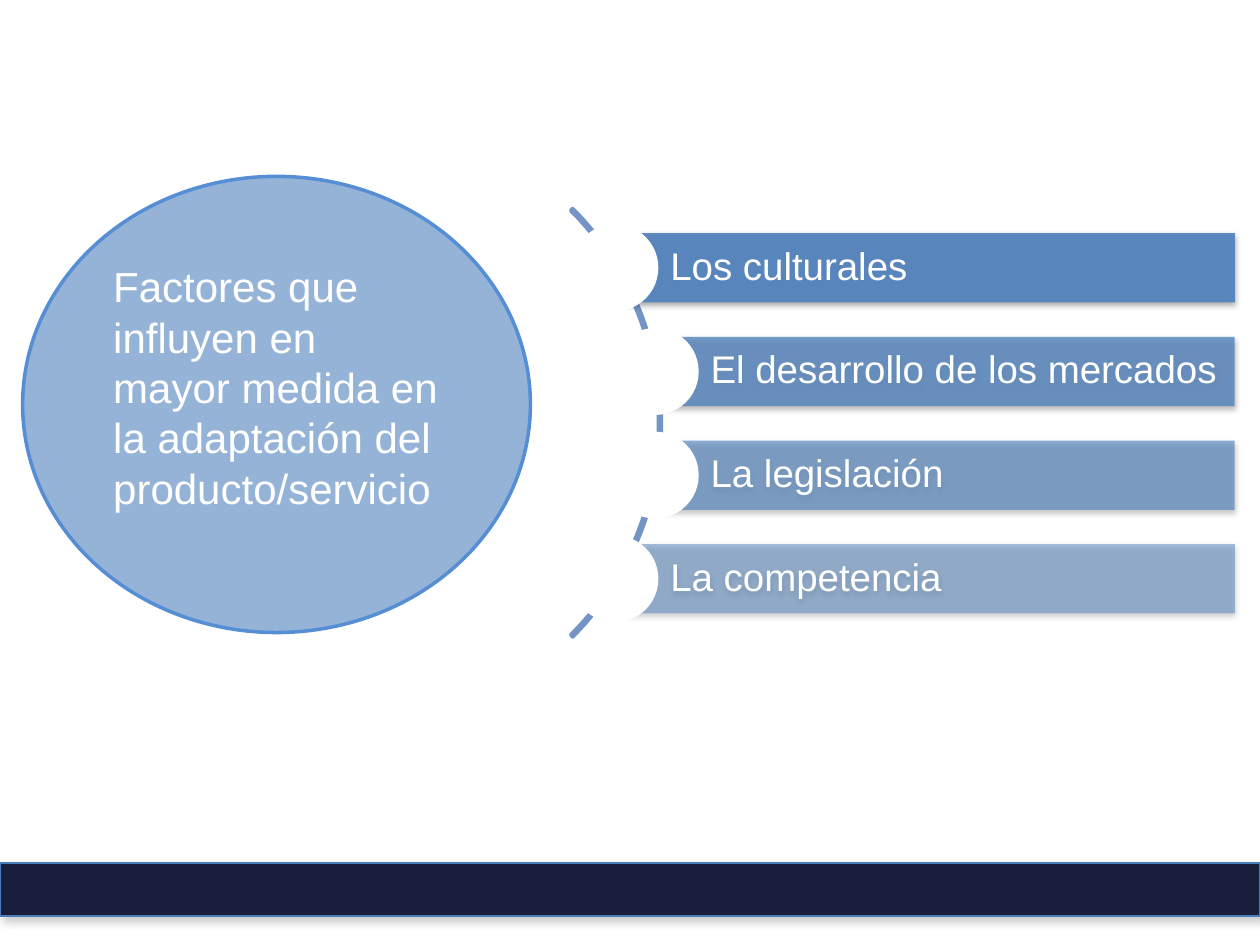
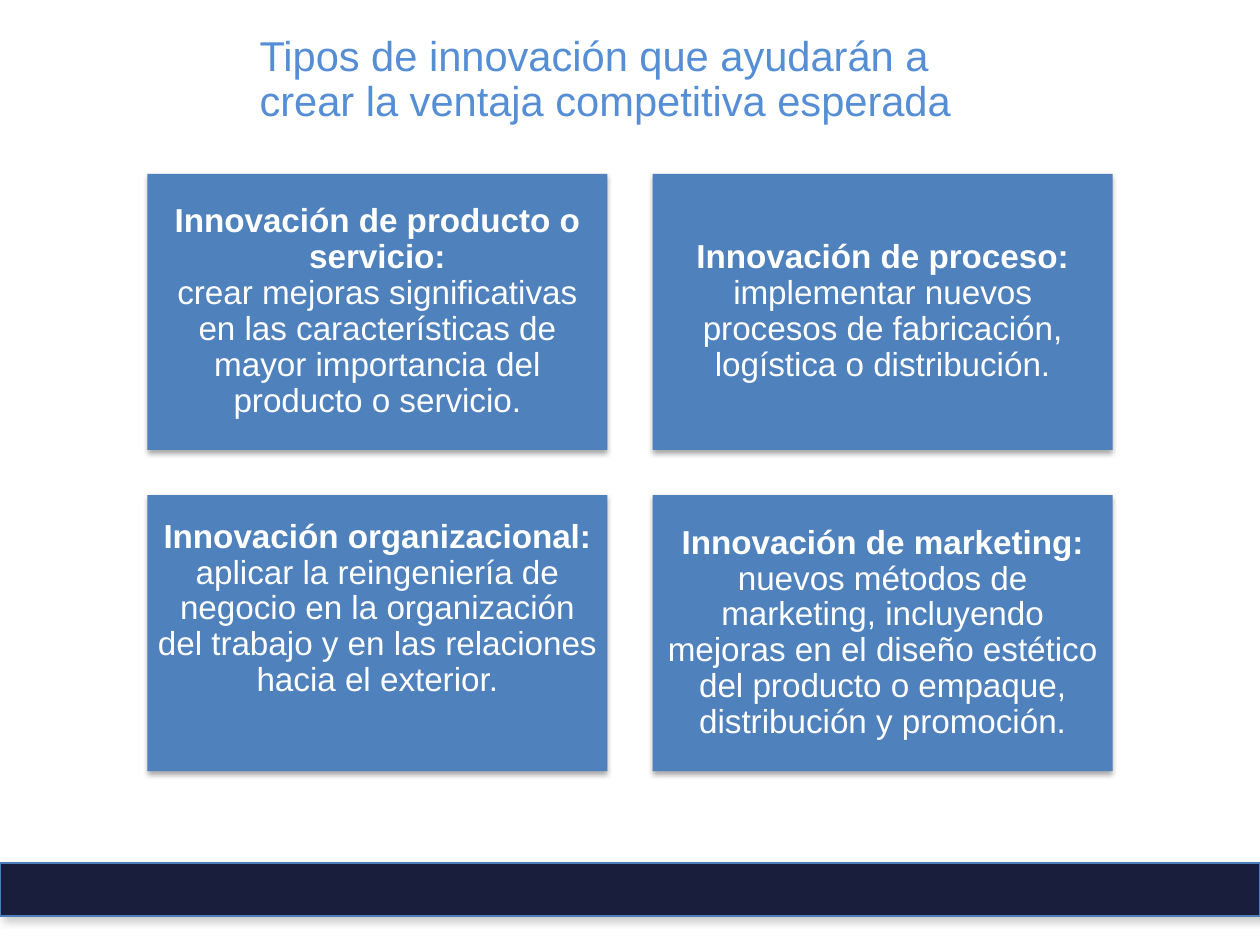
from lxml.etree import SubElement
from pptx import Presentation
from pptx.dml.color import RGBColor
from pptx.enum.shapes import MSO_SHAPE
from pptx.enum.text import MSO_ANCHOR, MSO_AUTO_SIZE, PP_ALIGN
from pptx.oxml.ns import qn
from pptx.util import Inches, Pt

COLORS = {
    "white": "FFFFFF", "band": "191E3C", "band_line": "4A7EBB",
    "box": "4F81BD", "arc": "7394C5", "circle": "95B3D7",
    "accent": "558ED5", "gray": "808080", "black": "000000",
}
FONT = "Arial"
# Shadows: color, opacity %, blur pt, distance pt, angle
BAND_SHADOW = ("gray", 40, 5, 3, 45)
BOX_SHADOW = ("black", 35, 3.1, 1.8, 90)


def draw_shape(page, kind, at, fill, line=None, width=2, shadow=None, opacity=100):
    shape = page.shapes.add_shape(kind, *[Inches(value) for value in at])
    shape.fill.solid()
    shape.fill.fore_color.rgb = RGBColor.from_string(COLORS[fill])
    properties = shape._element.spPr
    if opacity < 100:
        color = properties.find(qn("a:solidFill"))[0]
        SubElement(color, qn("a:alpha"), val=str(opacity * 1000))
    if line:
        shape.line.color.rgb = RGBColor.from_string(COLORS[line])
        shape.line.width = Pt(width)
    else:
        shape.line.fill.background()
    shape.shadow.inherit = False
    if shadow:
        name, strength, blur, distance, angle = shadow
        outer = SubElement(
            properties.find(qn("a:effectLst")), qn("a:outerShdw"),
            blurRad=str(Pt(blur)), dist=str(Pt(distance)),
            dir=str(angle * 60000), algn="ctr", rotWithShape="0")
        color = SubElement(outer, qn("a:srgbClr"), val=COLORS[name])
        SubElement(color, qn("a:alpha"), val=str(strength * 1000))
    return shape


def style_text(frame, size, color="white", align=PP_ALIGN.LEFT,
               anchor=MSO_ANCHOR.MIDDLE, spacing=0.9, insets=None):
    frame.word_wrap = True
    frame.auto_size = MSO_AUTO_SIZE.NONE
    frame.vertical_anchor = anchor
    if insets:
        (frame.margin_left, frame.margin_top, frame.margin_right,
         frame.margin_bottom) = [Inches(value) for value in insets]
    para = frame.paragraphs[0]
    para.alignment = align
    para.line_spacing = spacing
    para.font.name = FONT
    para.font.size = Pt(size)
    para.font.color.rgb = RGBColor.from_string(COLORS[color])


deck = Presentation()
deck.slide_width, deck.slide_height = Inches(10), Inches(7.5)
TITLE_ONLY, BLANK = deck.slide_layouts[5], deck.slide_layouts[6]
factors_page = deck.slides.add_slide(BLANK)
types_page = deck.slides.add_slide(TITLE_ONLY)

# Footer band on both slides
for page in (factors_page, types_page):
    draw_shape(page, MSO_SHAPE.RECTANGLE, (0, 6.85, 10, 0.42), "band",
               "band_line", 0.75, BAND_SHADOW)

# Slide 1: arc behind the factor bars
arc = draw_shape(factors_page, MSO_SHAPE.BLOCK_ARC, (0.44, 0.95, 4.81, 4.81), "arc", "arc")
for index, value in enumerate((189, 27, 0.005)):
    arc.adjustments[index] = value

# Factor bars, each with a white disc centred on its left edge
BAR_RIGHT, BAR_TOP, BAR_HEIGHT, BAR_STEP, DISC = 9.8, 1.85, 0.55, 0.823, 0.69
factors = [
    ("Los culturales", 4.88, 90),
    ("El desarrollo de los mercados", 5.2, 77),
    ("La legislación", 5.2, 63),
    ("La competencia", 4.88, 50),
]
for row, (factor, left, opacity) in enumerate(factors):
    top = BAR_TOP + row * BAR_STEP
    bar = draw_shape(factors_page, MSO_SHAPE.RECTANGLE,
                     (left, top, BAR_RIGHT - left, BAR_HEIGHT), "box",
                     shadow=BOX_SHADOW, opacity=opacity)
    bar.text_frame.text = factor
    style_text(bar.text_frame, 22, insets=(0.44, 0.06, 0.06, 0.06))
    draw_shape(factors_page, MSO_SHAPE.OVAL,
               (left - DISC / 2, top + (BAR_HEIGHT - DISC) / 2, DISC, DISC), "white")

# Main circle and its text
draw_shape(factors_page, MSO_SHAPE.OVAL, (0.18, 1.4, 4.03, 3.62), "circle", "accent")
topic = factors_page.shapes.add_textbox(Inches(0.8), Inches(2.02), Inches(2.79), Inches(2.12))
topic.text_frame.text = ("Factores que influyen en mayor medida en la adaptación "
                         "del producto/servicio")
style_text(topic.text_frame, 24, anchor=MSO_ANCHOR.TOP, spacing=1.0)

# Slide 2: title
title = types_page.shapes.title
title.left, title.top, title.width, title.height = [
    Inches(value) for value in (1.96, 0.23, 6.09, 1.02)]
title.text_frame.text = ("Tipos de innovación que ayudarán a crear la ventaja "
                         "competitiva esperada")
style_text(title.text_frame, 23.8, "accent", anchor=MSO_ANCHOR.TOP)

# Two by two grid of innovation types; the last value is the bottom inset
BOX_WIDTH, BOX_HEIGHT, GAP = 3.65, 2.19, 0.36
innovations = [
    ("Innovación de producto o servicio:",
     "crear mejoras significativas en las características de mayor importancia "
     "del producto o servicio.", 0.08),
    ("Innovación de proceso:",
     "implementar nuevos procesos de fabricación, logística o distribución.", 0.08),
    ("Innovación organizacional:",
     "aplicar la reingeniería de negocio en la organización del trabajo y en las "
     "relaciones hacia el exterior.", 0.46),
    ("Innovación de marketing:",
     "nuevos métodos de marketing, incluyendo mejoras en el diseño estético del "
     "producto o empaque, distribución y promoción.", 0.08),
]
for index, (heading, detail, bottom) in enumerate(innovations):
    row, column = divmod(index, 2)
    box = draw_shape(types_page, MSO_SHAPE.RECTANGLE,
                     (1.17 + column * (BOX_WIDTH + GAP), 1.38 + row * (BOX_HEIGHT + GAP),
                      BOX_WIDTH, BOX_HEIGHT), "box", shadow=BOX_SHADOW)
    para = box.text_frame.paragraphs[0]
    span = para.add_run()
    span.text = heading
    span.font.bold = True
    para.add_line_break()
    para.add_run().text = detail
    style_text(box.text_frame, 19, align=PP_ALIGN.CENTER, insets=(0.08, 0.08, 0.08, bottom))

deck.save("out.pptx")
